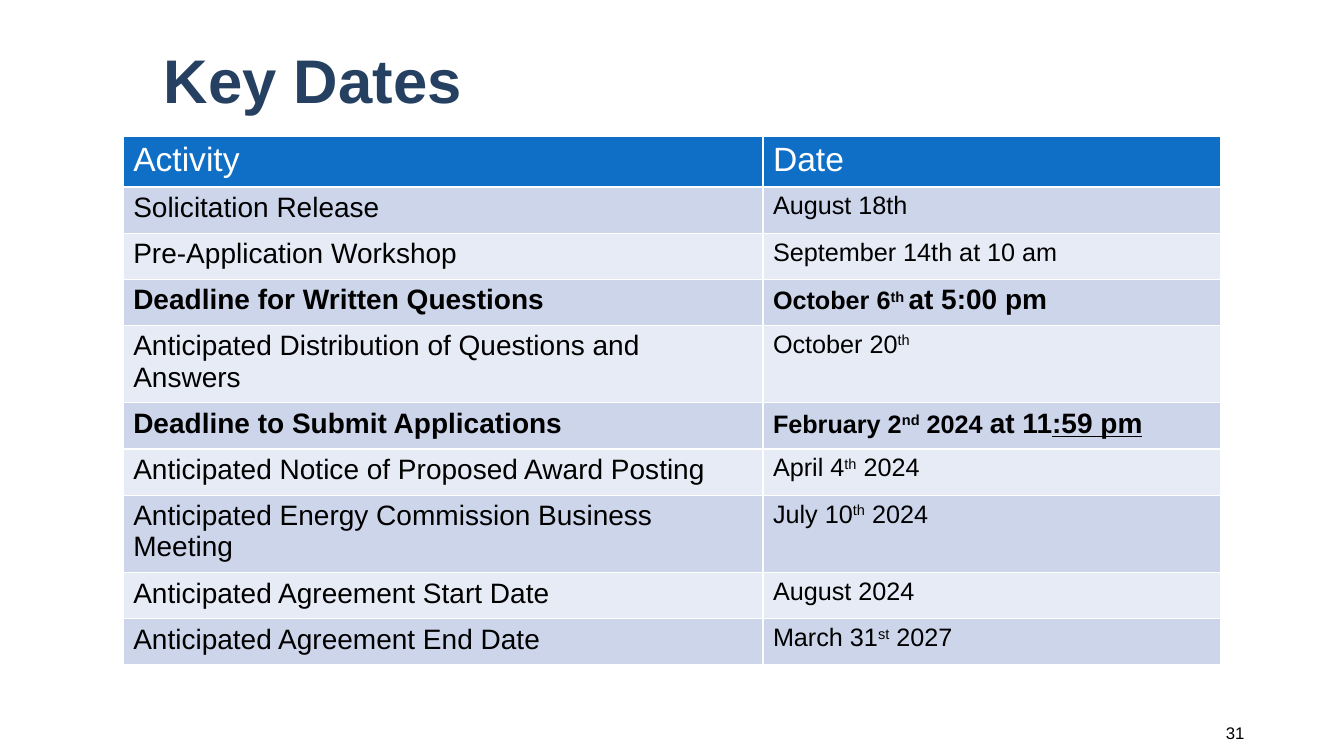
from dataclasses import dataclass

from pptx import Presentation
from pptx.dml.color import RGBColor
from pptx.enum.text import MSO_ANCHOR, PP_ALIGN
from pptx.slide import Slide
from pptx.table import _Cell
from pptx.text.text import _Paragraph
from pptx.util import Pt


@dataclass(frozen=True)
class Theme:
    font: str = "Arial"
    title: str = "254061"
    header: str = "0F6FC6"
    header_text: str = "FFFFFF"
    text: str = "000000"
    bands: tuple[str, str] = ("CCD5EA", "E7EBF5")
    title_size: int = 44
    header_size: int = 24
    activity_size: int = 20
    date_size: int = 18
    number_size: int = 12


@dataclass(frozen=True)
class Part:
    text: str
    size: int = 18
    sup: bool = False
    underline: bool = False


@dataclass(frozen=True)
class KeyDate:
    activity: str
    date: tuple[Part, ...]
    bold: bool = False


T = Theme()
DATES = [
    KeyDate("Solicitation Release", (Part("August 18th"),)),
    KeyDate("Pre-Application Workshop", (Part("September 14th at 10 am"),)),
    KeyDate("Deadline for Written Questions",
            (Part("October 6"), Part("th ", sup=True),
             Part("at 5:00 pm", T.activity_size)), bold=True),
    KeyDate("Anticipated Distribution of Questions and Answers",
            (Part("October 20"), Part("th", sup=True))),
    KeyDate("Deadline to Submit Applications",
            (Part("February 2"), Part("nd", sup=True), Part(" 2024 "),
             Part("at 11", T.activity_size),
             Part(":59 pm", T.activity_size, underline=True)), bold=True),
    KeyDate("Anticipated Notice of Proposed Award Posting",
            (Part("April 4"), Part("th", sup=True), Part(" 2024"))),
    KeyDate("Anticipated Energy Commission Business Meeting",
            (Part("July 10"), Part("th", sup=True), Part(" 2024"))),
    KeyDate("Anticipated Agreement Start Date", (Part("August 2024"),)),
    KeyDate("Anticipated Agreement End Date",
            (Part("March 31"), Part("st", sup=True), Part(" 2027"))),
]


def add_text(p: _Paragraph, text: str, *, size: int, color: str = T.text,
             bold: bool = False, sup: bool = False,
             underline: bool = False) -> None:
    r = p.add_run()
    r.text = text
    r.font.name = T.font
    r.font.size = Pt(size)
    r.font.bold = bold
    r.font.underline = underline
    r.font.color.rgb = RGBColor.from_string(color)
    if sup:
        r.font._element.set("baseline", "30000")


def add_box(s: Slide, left: float, top: float, width: float,
            height: float) -> _Paragraph:
    sp = s.shapes.add_textbox(Pt(left), Pt(top), Pt(width), Pt(height))
    tf = sp.text_frame
    tf.word_wrap = True
    tf.vertical_anchor = MSO_ANCHOR.MIDDLE
    return tf.paragraphs[0]


def fill_cell(cell: _Cell, color: str) -> _Paragraph:
    cell.fill.solid()
    cell.fill.fore_color.rgb = RGBColor.from_string(color)
    return cell.text_frame.paragraphs[0]


def add_dates(s: Slide) -> None:
    row_height, widths = 33, (457, 327)
    count = len(DATES) + 1
    table = s.shapes.add_table(count, len(widths), Pt(88), Pt(97.5),
                               Pt(sum(widths)), Pt(row_height * count)).table
    for column, width in zip(table.columns, widths):
        column.width = Pt(width)
    for cell, heading in zip(table.rows[0].cells, ("Activity", "Date")):
        add_text(fill_cell(cell, T.header), heading, size=T.header_size,
                 color=T.header_text)
    for i, item in enumerate(DATES):
        activity, date = (fill_cell(cell, T.bands[i % 2])
                          for cell in table.rows[i + 1].cells)
        add_text(activity, item.activity, size=T.activity_size, bold=item.bold)
        for part in item.date:
            add_text(date, part.text, size=part.size, bold=item.bold,
                     sup=part.sup, underline=part.underline)


def main() -> None:
    prs = Presentation()
    prs.slide_width, prs.slide_height = Pt(960), Pt(540)
    s = prs.slides.add_slide(prs.slide_layouts[6])
    p = add_box(s, 110, 18.7, 784, 82)
    p.line_spacing = 0.9
    add_text(p, "Key Dates", size=T.title_size, color=T.title, bold=True)
    add_dates(s)
    p = add_box(s, 754, 509, 142, 28.8)
    p.alignment = PP_ALIGN.RIGHT
    add_text(p, "31", size=T.number_size)
    prs.save("out.pptx")


if __name__ == "__main__":
    main()
